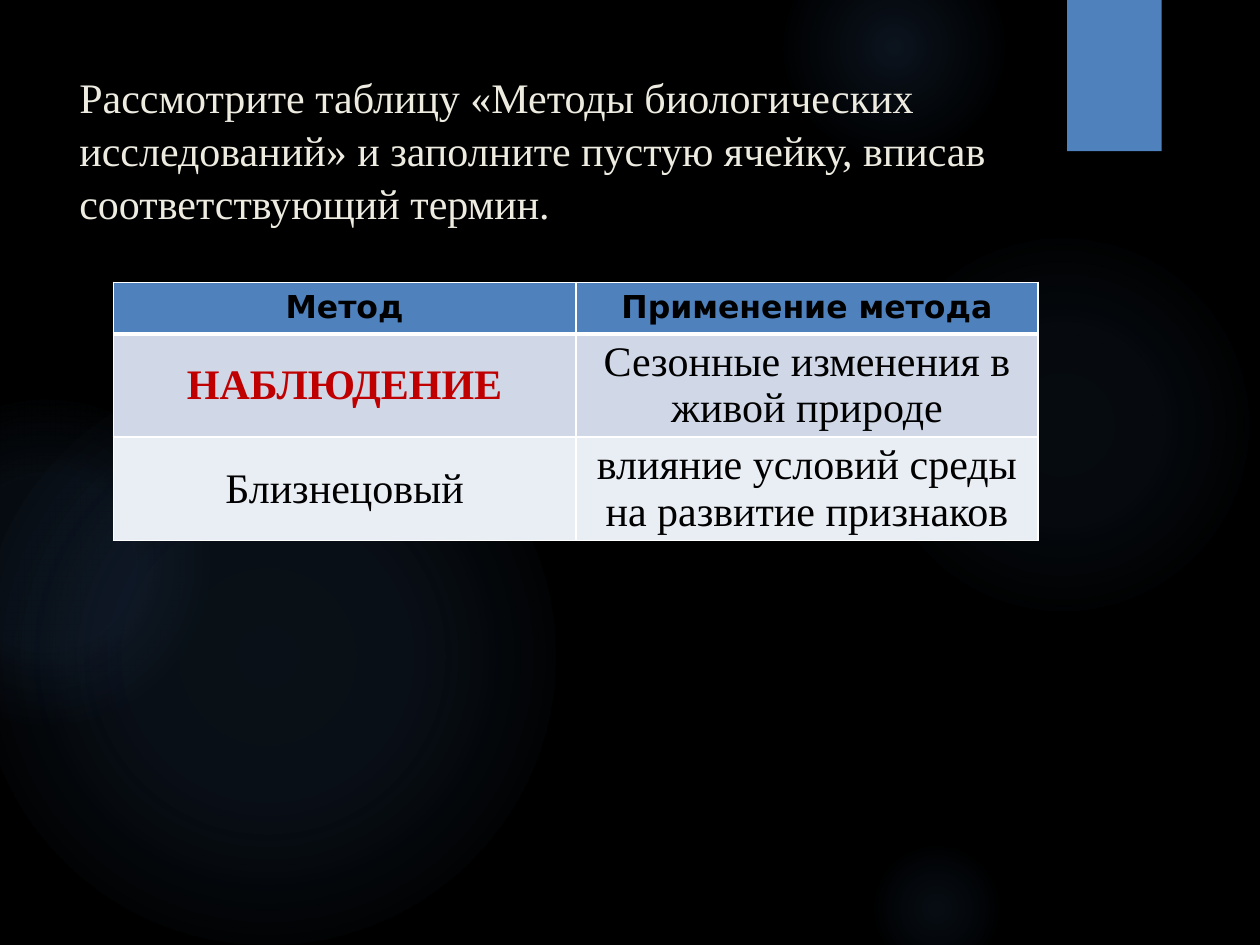
from lxml import etree
from pptx import Presentation
from pptx.dml.color import RGBColor
from pptx.enum.shapes import MSO_SHAPE
from pptx.enum.text import MSO_ANCHOR, MSO_AUTO_SIZE, PP_ALIGN
from pptx.oxml.ns import qn
from pptx.util import Inches, Pt

OVAL, RECTANGLE = MSO_SHAPE.OVAL, MSO_SHAPE.RECTANGLE
TOP, MIDDLE = MSO_ANCHOR.TOP, MSO_ANCHOR.MIDDLE
LEFT, CENTER = PP_ALIGN.LEFT, PP_ALIGN.CENTER
NO_AUTOFIT = MSO_AUTO_SIZE.NONE

THEME = {
    "background": "000000", "glow": "558ED5", "accent": "4F81BD",
    "title": "EEECE1", "text": "000000", "answer": "C00000", "border": "FFFFFF",
    "row_fills": ["4F81BD", "D0D8E8", "E9EDF4"],
    "serif": "Times New Roman", "sans": "DejaVu Sans",
    "body_size": 24, "header_size": 18, "thin": 1, "thick": 3,
}

TITLE = ("Рассмотрите таблицу «Методы биологических исследований» и заполните "
         "пустую ячейку, вписав соответствующий термин.")
METHODS = [
    ["Метод", "Применение метода"],
    ["НАБЛЮДЕНИЕ", "Сезонные изменения в живой природе"],
    ["Близнецовый", "влияние условий среды на развитие признаков"],
]
ANSWER_CELL = (1, 0)
ROW_HEIGHTS = [0.41, 0.82, 0.82]
COLUMN_WIDTH = 3.67

# left, top, diameter, (position, opacity) stops
GLOWS = [
    (6.89, 1.83, 3.08, [(0, 7), (36, 6), (69, 0)]),
    (6.22, -0.5, 1.75, [(0, 14), (36, 7), (73, 0)]),
    (6.89, 6.67, 1.08, [(0, 9), (36, 5), (66, 0)]),
    (-0.17, 2.92, 4.58, [(0, 11), (36, 10), (75, 0)]),
    (-0.92, 3.17, 2.58, [(0, 8), (36, 8), (72, 0)]),
]


def color(name):
    return RGBColor.from_string(THEME[name])


def add_child(parent, tag, **attributes):
    return etree.SubElement(parent, qn(tag), {k: str(v) for k, v in attributes.items()})


def add_plain_shape(slide, kind, left, top, width, height):
    shape = slide.shapes.add_shape(
        kind, Inches(left), Inches(top), Inches(width), Inches(height))
    shape.shadow.inherit = False
    shape.line.fill.background()
    return shape


def add_glow(slide, left, top, diameter, stops):
    glow = add_plain_shape(slide, OVAL, left, top, diameter, diameter)
    glow.fill.background()
    properties = glow._element.spPr
    gradient = etree.Element(qn("a:gradFill"), rotWithShape="1")
    stop_list = add_child(gradient, "a:gsLst")
    for position, opacity in stops:
        stop = add_child(stop_list, "a:gs", pos=position * 1000)
        tint = add_child(stop, "a:srgbClr", val=THEME["glow"])
        add_child(tint, "a:alpha", val=opacity * 1000)
    center = add_child(gradient, "a:path", path="circle")
    add_child(center, "a:fillToRect", l=50000, t=50000, r=50000, b=50000)
    properties.replace(properties.find(qn("a:noFill")), gradient)


def add_text(paragraph, text, font, size, color_name, bold=False):
    run = paragraph.add_run()
    run.text = text
    run.font.name = THEME[font]
    run.font.size = Pt(THEME[size])
    run.font.color.rgb = color(color_name)
    run.font.bold = bold


def place_title(slide):
    title = slide.shapes.title
    title.left, title.top = Inches(0.53), Inches(0.5)
    title.width, title.height = Inches(7.72), Inches(1.53)
    frame = title.text_frame
    frame.word_wrap = True
    frame.auto_size = NO_AUTOFIT
    frame.vertical_anchor = TOP
    paragraph = frame.paragraphs[0]
    paragraph.alignment = LEFT
    paragraph.line_spacing = 1.05
    add_text(paragraph, TITLE, "serif", "body_size", "title")
    title._element.getparent().append(title._element)


def set_borders(cell, is_header):
    properties = cell._tc.get_or_add_tcPr()
    for side in "LRTB":
        weight = "thick" if is_header and side == "B" else "thin"
        line = add_child(properties, f"a:ln{side}", w=Pt(THEME[weight]))
        add_child(add_child(line, "a:solidFill"), "a:srgbClr", val=THEME["border"])


def add_methods(slide):
    columns = len(METHODS[0])
    table = slide.shapes.add_table(
        len(METHODS), columns, Inches(0.9), Inches(2.24),
        Inches(COLUMN_WIDTH * columns), Inches(sum(ROW_HEIGHTS))).table
    for column in table.columns:
        column.width = Inches(COLUMN_WIDTH)
    for r, values in enumerate(METHODS):
        table.rows[r].height = Inches(ROW_HEIGHTS[r])
        is_header = r == 0
        for c, value in enumerate(values):
            cell = table.cell(r, c)
            is_answer = (r, c) == ANSWER_CELL
            set_borders(cell, is_header)
            cell.fill.solid()
            cell.fill.fore_color.rgb = RGBColor.from_string(THEME["row_fills"][r])
            cell.vertical_anchor = MIDDLE
            cell.margin_left = cell.margin_right = Inches(0.03)
            cell.margin_top = cell.margin_bottom = Inches(0.04)
            paragraph = cell.text_frame.paragraphs[0]
            paragraph.alignment = CENTER
            add_text(paragraph, value,
                     "sans" if is_header else "serif",
                     "header_size" if is_header else "body_size",
                     "answer" if is_answer else "text",
                     is_header or is_answer)


def main():
    deck = Presentation()
    deck.slide_width, deck.slide_height = Inches(10), Inches(7.5)
    slide = deck.slides.add_slide(deck.slide_layouts.get_by_name("Title Only"))
    slide.background.fill.solid()
    slide.background.fill.fore_color.rgb = color("background")
    for glow in GLOWS:
        add_glow(slide, *glow)
    ribbon = add_plain_shape(slide, RECTANGLE, 8.47, 0, 0.75, 1.2)
    ribbon.fill.solid()
    ribbon.fill.fore_color.rgb = color("accent")
    place_title(slide)
    add_methods(slide)
    deck.save("out.pptx")


if __name__ == "__main__":
    main()
